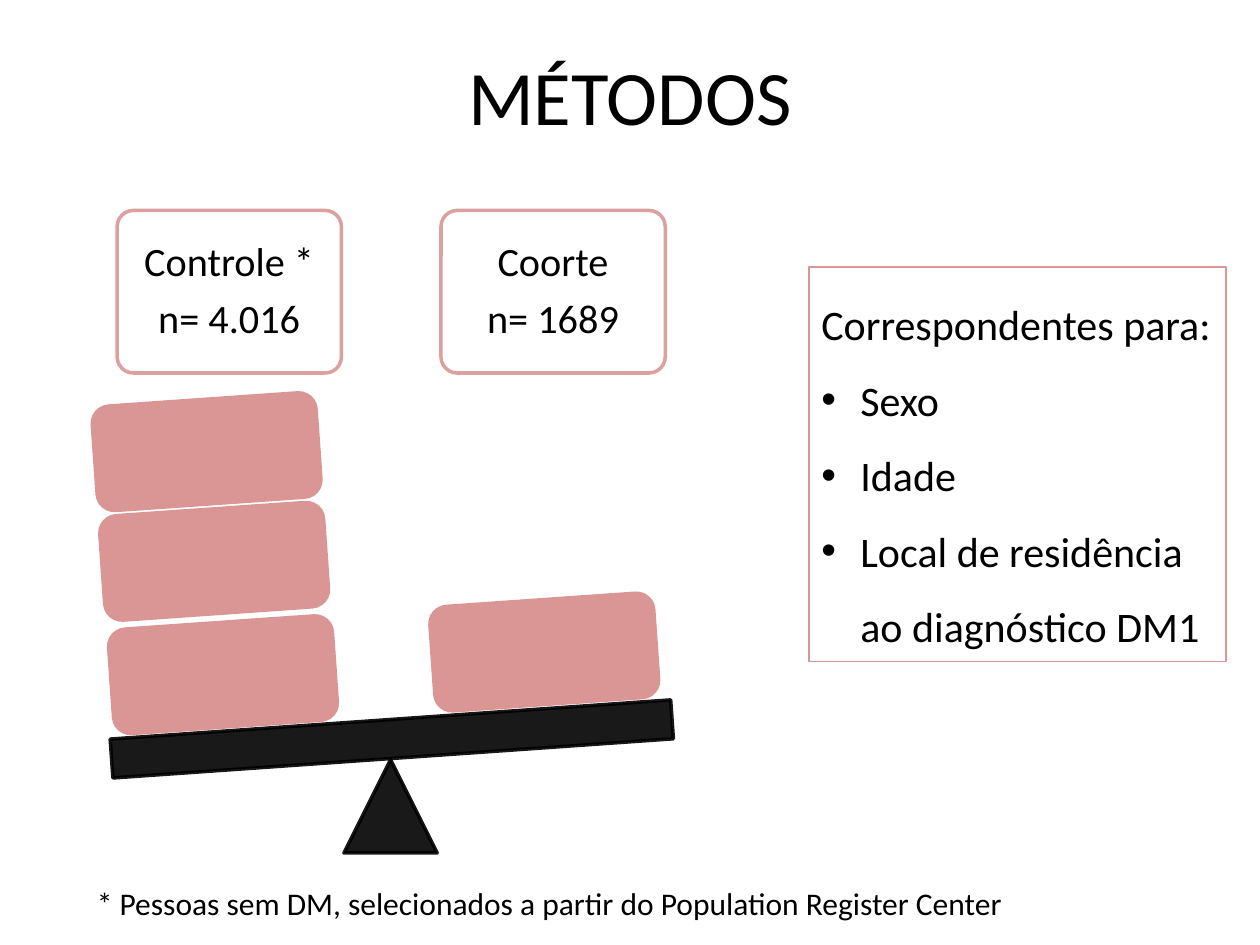
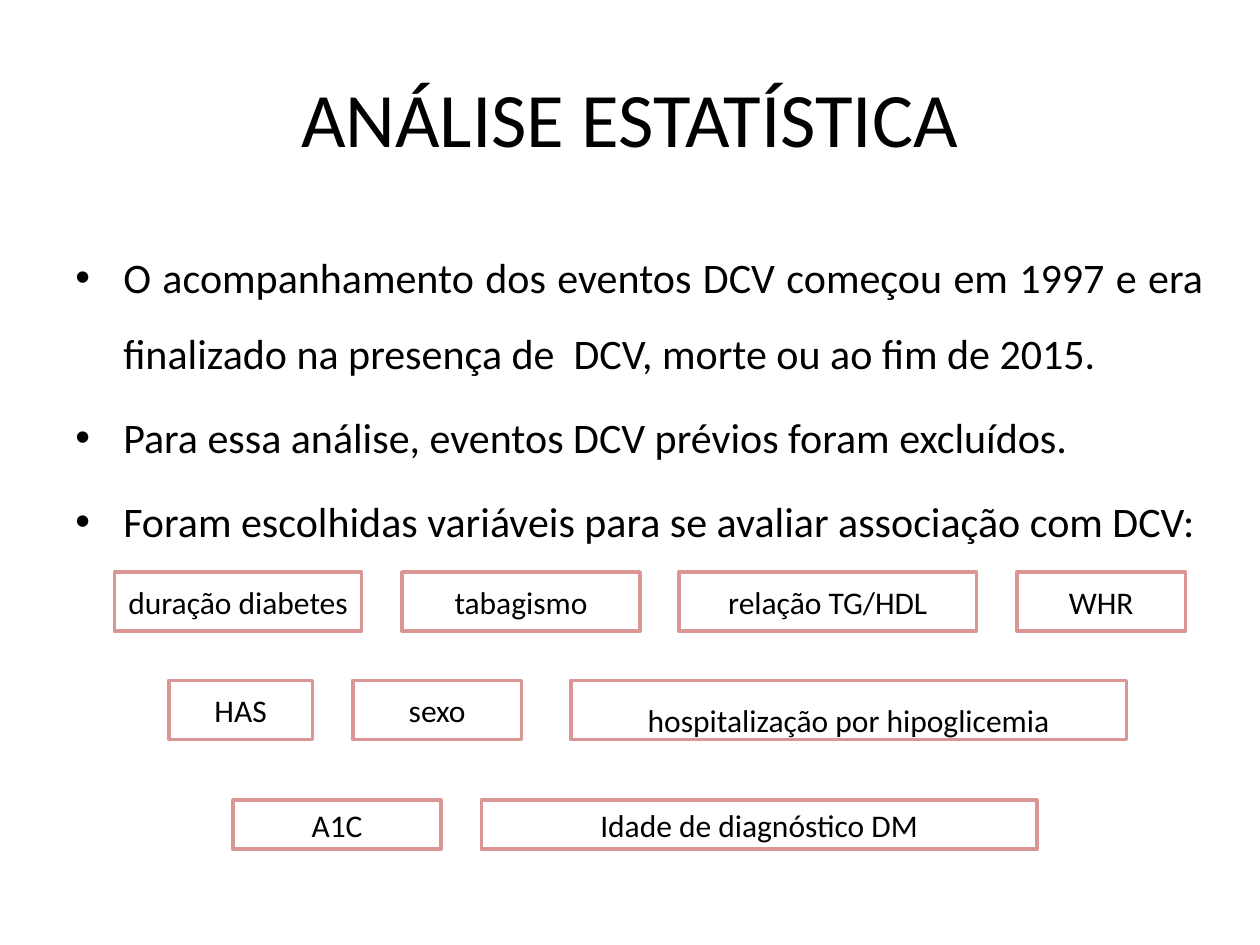
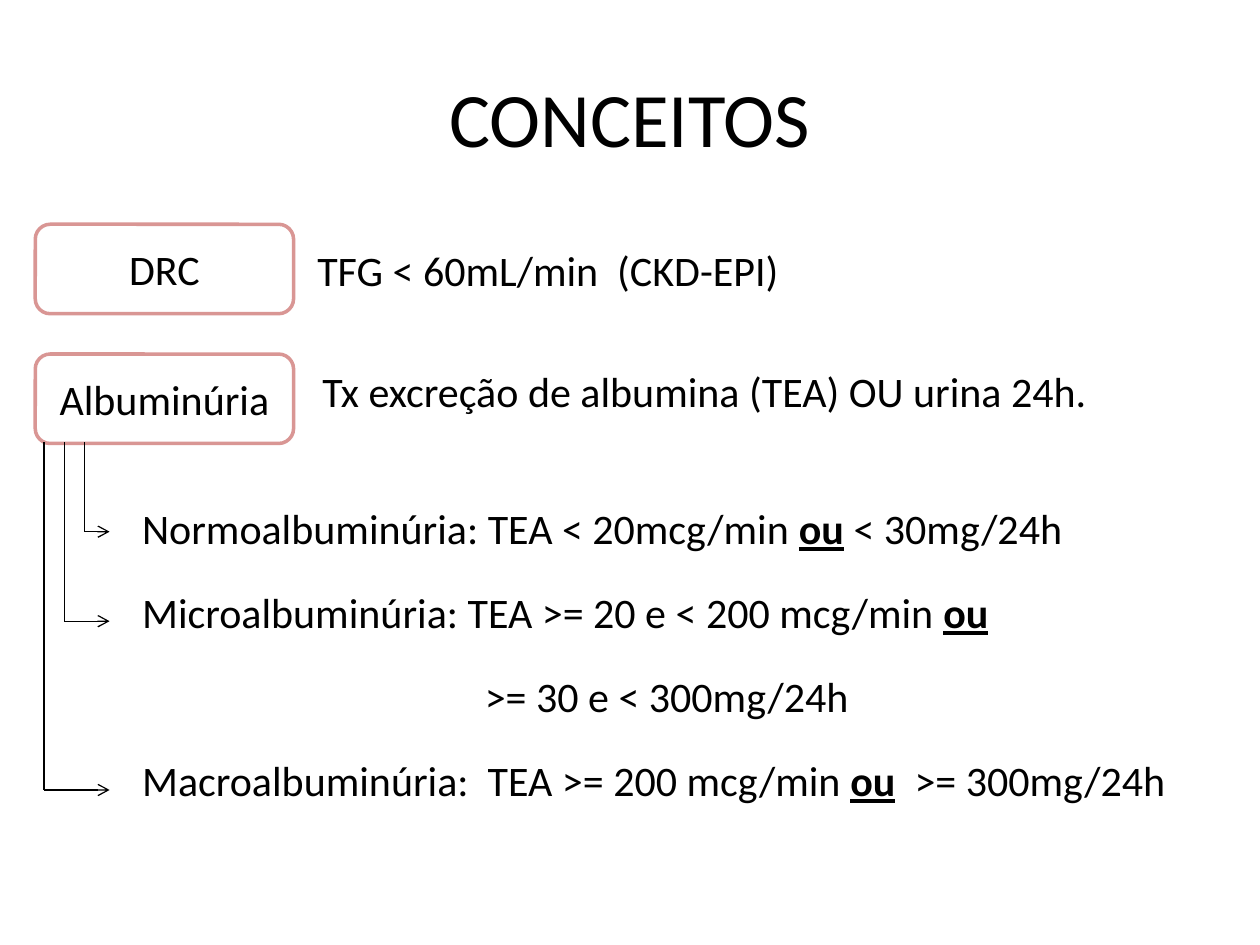
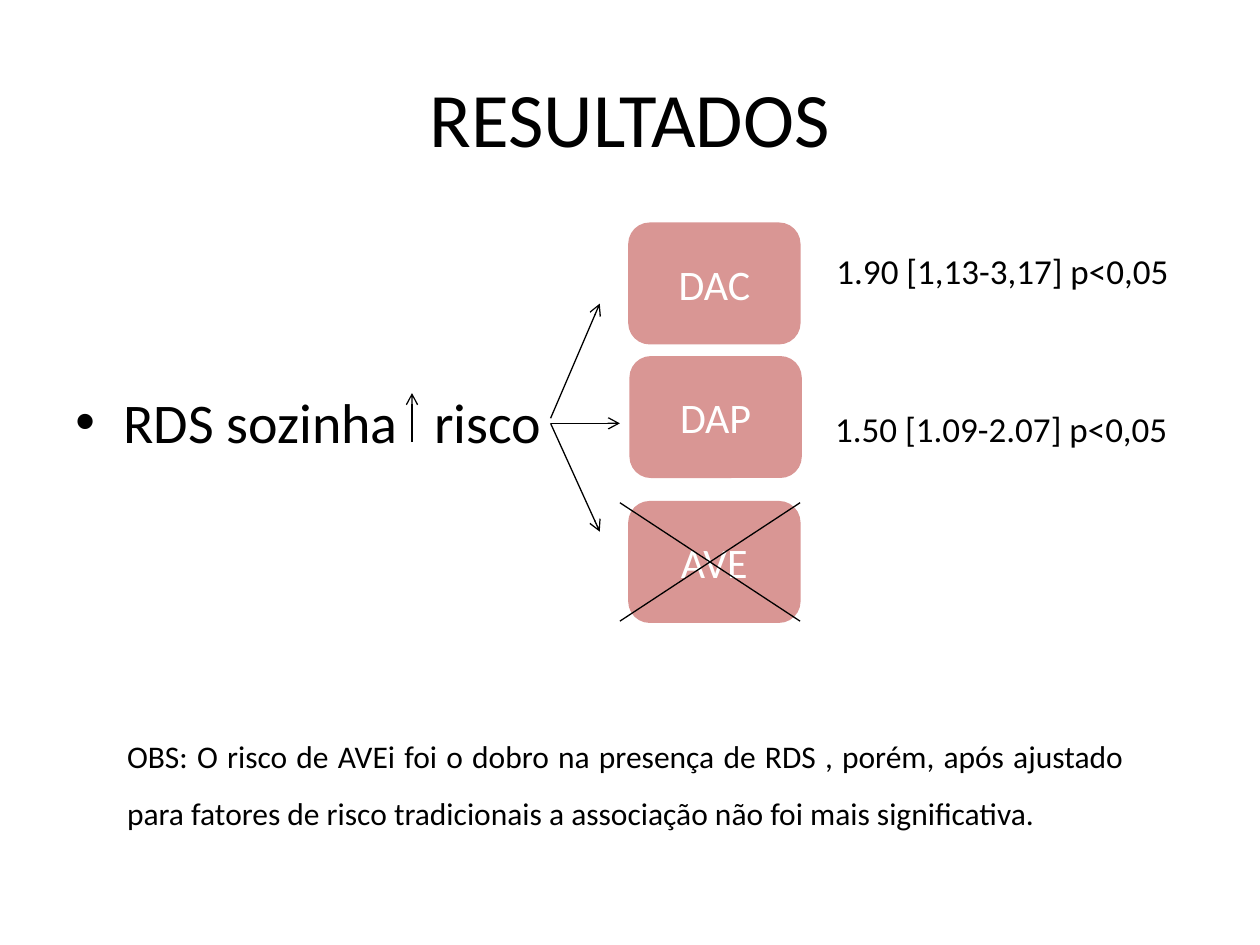
from pptx import Presentation
from pptx import util as u
from pptx.dml import color as dml
from pptx.enum import shapes, text
from pptx.oxml import ns, xmlchemy

FONT = "Calibri"
ROSE, BLACK, WHITE = "D99694", "000000", "FFFFFF"
TILT = -4
SHAPE = shapes.MSO_SHAPE
ALIGN = text.PP_ALIGN
ANCHOR = text.MSO_ANCHOR


def rgb(value):
    """Turn a hex string into a colour."""
    return dml.RGBColor.from_string(value)


def child(parent, tag, **attributes):
    """Append a drawing element with the given attributes."""
    element = xmlchemy.OxmlElement(tag)
    for name, value in attributes.items():
        element.set(name, str(value))
    parent.append(element)
    return element


def make_translucent(shape, percent=90):
    """Set the opacity of every solid colour of a shape."""
    for element in shape.element.spPr.iter(ns.qn("a:srgbClr")):
        child(element, "a:alpha", val=percent * 1000)


def indent(paragraph, margin, first=0):
    """Set the left margin and first line offset of a paragraph in inches."""
    properties = paragraph._p.get_or_add_pPr()
    properties.set("marL", str(u.Inches(margin)))
    properties.set("indent", str(u.Inches(first)))


def add_runs(paragraph, content, size, color):
    """Add runs, with the parts between bars bold and underlined."""
    for index, part in enumerate(content.split("|")):
        if part:
            run = paragraph.add_run()
            run.text = part
            run.font.name = FONT
            run.font.size = u.Pt(size)
            run.font.color.rgb = rgb(color)
            if index % 2:
                run.font.bold = run.font.underline = True


def write(shape, lines, size, color=BLACK, align=ALIGN.LEFT, anchor=ANCHOR.MIDDLE,
          spacing=None, before=None, after=None, hanging=0.38):
    """Fill a shape with paragraphs; lines that start with a dot get a bullet."""
    frame = shape.text_frame
    frame.word_wrap = True
    frame.vertical_anchor = anchor
    for index, line in enumerate(lines):
        paragraph = frame.add_paragraph() if index else frame.paragraphs[0]
        paragraph.alignment = align
        if spacing:
            paragraph.line_spacing = spacing
        if before:
            paragraph.space_before = u.Pt(before)
        if after:
            paragraph.space_after = u.Pt(after)
        if line.startswith("• "):
            indent(paragraph, hanging, -hanging)
            properties = paragraph._p.get_or_add_pPr()
            child(properties, "a:buFont", typeface="Arial")
            child(properties, "a:buChar", char="•")
        add_runs(paragraph, line.removeprefix("• "), size, color)


def add_text(slide, box, lines, size, **style):
    """Add a text box."""
    shape = slide.shapes.add_textbox(*map(u.Inches, box))
    write(shape, lines, size, **style)
    return shape


def add_label(slide, left, middle, width, line, size):
    """Add a one-line text centred on a height."""
    add_text(slide, (left, middle - 0.3, width, 0.6), [line], size)


def add_box(slide, kind, box, fill=WHITE, line=ROSE, weight=2, rotation=0):
    """Add a preset shape; without a fill it stays open."""
    shape = slide.shapes.add_shape(kind, *map(u.Inches, box))
    shape.shadow.inherit = False
    shape.rotation = rotation
    if fill:
        shape.fill.solid()
        shape.fill.fore_color.rgb = rgb(fill)
    else:
        shape.fill.background()
    shape.line.color.rgb = rgb(line)
    shape.line.width = u.Pt(weight)
    return shape


def add_captioned(slide, kind, box, caption, size, color=BLACK, fill=WHITE, spacing=None):
    """Add a shape with one centred caption."""
    shape = add_box(slide, kind, box, fill)
    write(shape, [caption], size, color, ALIGN.CENTER, spacing=spacing)


def add_line(slide, start, end, arrow=False):
    """Add a thin black line, with an open arrowhead if asked."""
    points = map(u.Inches, (*start, *end))
    connector = slide.shapes.add_connector(shapes.MSO_CONNECTOR.STRAIGHT, *points)
    connector.line.color.rgb = rgb(BLACK)
    connector.line.width = u.Pt(0.75)
    if arrow:
        child(connector.line._get_or_add_ln(), "a:tailEnd", type="arrow")
    child(connector._element.spPr, "a:effectLst")


def add_slide(presentation, title, top=0.3):
    """Add a blank slide with the shared title style."""
    slide = presentation.slides.add_slide(presentation.slide_layouts[6])
    slide.background.fill.solid()
    slide.background.fill.fore_color.rgb = rgb(WHITE)
    add_text(slide, (0.5, top, 9, 1.25), [title], 44, align=ALIGN.CENTER)
    return slide


def add_methods(presentation):
    """Build the seesaw of control and cohort groups."""
    slide = add_slide(presentation, "MÉTODOS", 0.13)
    groups = [(0.93, "Controle *", "n= 4.016"), (3.5, "Coorte", "n= 1689")]
    for left, *lines in groups:
        card = add_box(slide, SHAPE.ROUNDED_RECTANGLE, (left, 1.67, 1.78, 1.29))
        card.adjustments[0] = 0.1
        make_translucent(card)
        write(card, lines, 23, align=ALIGN.CENTER, spacing=0.9, after=8)
    pivot = add_box(slide, SHAPE.ISOSCELES_TRIANGLE, (2.73, 6.03, 0.74, 0.74), BLACK, BLACK)
    beam = add_box(slide, SHAPE.RECTANGLE, (0.88, 5.71, 4.46, 0.31), BLACK, BLACK, rotation=TILT)
    for part in (pivot, beam):
        make_translucent(part)
    for left, top in [(0.88, 4.94), (0.81, 4.04), (0.75, 3.17), (3.43, 4.76)]:
        add_box(slide, SHAPE.ROUNDED_RECTANGLE, (left, top, 1.78, 0.83), ROSE, rotation=TILT)
    note = "* Pessoas sem DM, selecionados a partir do Population Register Center"
    add_text(slide, (0.67, 6.97, 7.87, 0.4), [note], 18, anchor=ANCHOR.TOP)
    matching = add_box(slide, SHAPE.RECTANGLE, (6.42, 2.12, 3.31, 3.13), None, weight=0.75)
    write(matching, ["Correspondentes para:", "• Sexo", "• Idade",
                     "• Local de residência ao diagnóstico DM1"],
          24, anchor=ANCHOR.TOP, spacing=1.5, hanging=0.31)


def add_analysis(presentation):
    """Build the statistical analysis and its variables."""
    slide = add_slide(presentation, "ANÁLISE ESTATÍSTICA")
    add_text(slide, (0.5, 1.75, 9.15, 2.75), [
        "• O acompanhamento dos eventos DCV começou em 1997 e era finalizado "
        "na presença de  DCV, morte ou ao fim de 2015.",
        "• Para essa análise, eventos DCV prévios foram excluídos.",
        "• Foram escolhidas variáveis para se avaliar associação com DCV:",
    ], 24, align=ALIGN.JUSTIFY, anchor=ANCHOR.TOP, spacing=1.5, before=4.8)
    rows = [
        (4.54, 0.47, [(0.91, 1.96, "duração diabetes"), (3.19, 1.89, "tabagismo"),
                      (5.39, 2.36, "relação TG/HDL"), (8.07, 1.34, "WHR")]),
        (5.4, 0.47, [(1.34, 1.14, "HAS"), (2.8, 1.34, "sexo"),
                     (4.53, 4.41, "hospitalização por hipoglicemia")]),
        (6.35, 0.39, [(1.85, 1.65, "A1C"), (3.82, 4.41, "Idade de diagnóstico DM")]),
    ]
    for top, height, variables in rows:
        for left, width, name in variables:
            spacing = 1.5 if name.startswith("hospitalização") else None
            add_captioned(slide, SHAPE.RECTANGLE, (left, top, width, height), name, 18,
                          spacing=spacing)


def add_concepts(presentation):
    """Build the definitions of kidney disease and albuminuria."""
    slide = add_slide(presentation, "CONCEITOS")
    add_label(slide, 2.42, 2.14, 7, "TFG < 60mL/min  (CKD-EPI)", 24)
    add_label(slide, 2.46, 3.1, 7, "Tx excreção de albumina (TEA) OU urina 24h.", 24)
    criteria = add_text(slide, (1.03, 3.74, 8.5, 2.7), [
        "Normoalbuminúria: TEA < 20mcg/min |ou| < 30mg/24h",
        "Microalbuminúria: TEA >= 20 e < 200 mcg/min |ou|",
        ">= 30 e < 300mg/24h",
        "Macroalbuminúria:  TEA >= 200 mcg/min |ou|  >= 300mg/24h",
    ], 24, anchor=ANCHOR.TOP, spacing=1.5, before=4.8)
    indent(criteria.text_frame.paragraphs[2], 2.72)
    for top, term in [(1.78, "DRC"), (2.81, "Albuminúria")]:
        add_captioned(slide, SHAPE.ROUNDED_RECTANGLE, (0.28, top, 2.05, 0.71), term, 24)
    for left, bottom in [(0.67, 4.22), (0.51, 4.93), (0.35, 6.27)]:
        add_line(slide, (left, 3.51), (left, bottom))
        add_line(slide, (left, bottom), (0.87, bottom), arrow=True)


def add_results(presentation):
    """Build the risk outcomes."""
    slide = add_slide(presentation, "RESULTADOS")
    add_label(slide, 6.54, 2.15, 3, "1.90 [1,13-3,17] p<0,05", 20)
    add_label(slide, 6.53, 3.4, 3, "1.50 [1.09-2.07] p<0,05", 20)
    add_label(slide, 0.5, 3.34, 2.85, "• RDS sozinha", 32)
    add_label(slide, 3.35, 3.34, 1.2, "risco", 32)
    arrows = [((3.27, 3.51), (3.27, 3.12)), ((4.37, 3.32), (4.76, 2.41)),
              ((4.37, 3.36), (4.92, 3.36)), ((4.37, 3.36), (4.76, 4.22))]
    for start, end in arrows:
        add_line(slide, start, end, arrow=True)
    for left, top, outcome in [(5, 1.78, "DAC"), (5.01, 2.84, "DAP"), (5, 3.99, "AVE")]:
        add_captioned(slide, SHAPE.ROUNDED_RECTANGLE, (left, top, 1.34, 0.94), outcome, 24,
                      WHITE, ROSE)
    for start, end in [(4.93, 3.99), (3.99, 4.93)]:
        add_line(slide, (4.92, start), (6.35, end))
    add_text(slide, (0.91, 5.65, 8.11, 1.01), [
        "OBS: O risco de AVEi foi o dobro na presença de RDS , porém, após ajustado "
        "para fatores de risco tradicionais a associação não foi mais significativa.",
    ], 18, align=ALIGN.JUSTIFY, anchor=ANCHOR.TOP, spacing=1.5)


def main():
    """Build and save the presentation."""
    presentation = Presentation()
    presentation.slide_width = u.Inches(10)
    presentation.slide_height = u.Inches(7.5)
    add_methods(presentation)
    add_analysis(presentation)
    add_concepts(presentation)
    add_results(presentation)
    presentation.save("out.pptx")


if __name__ == "__main__":
    main()
